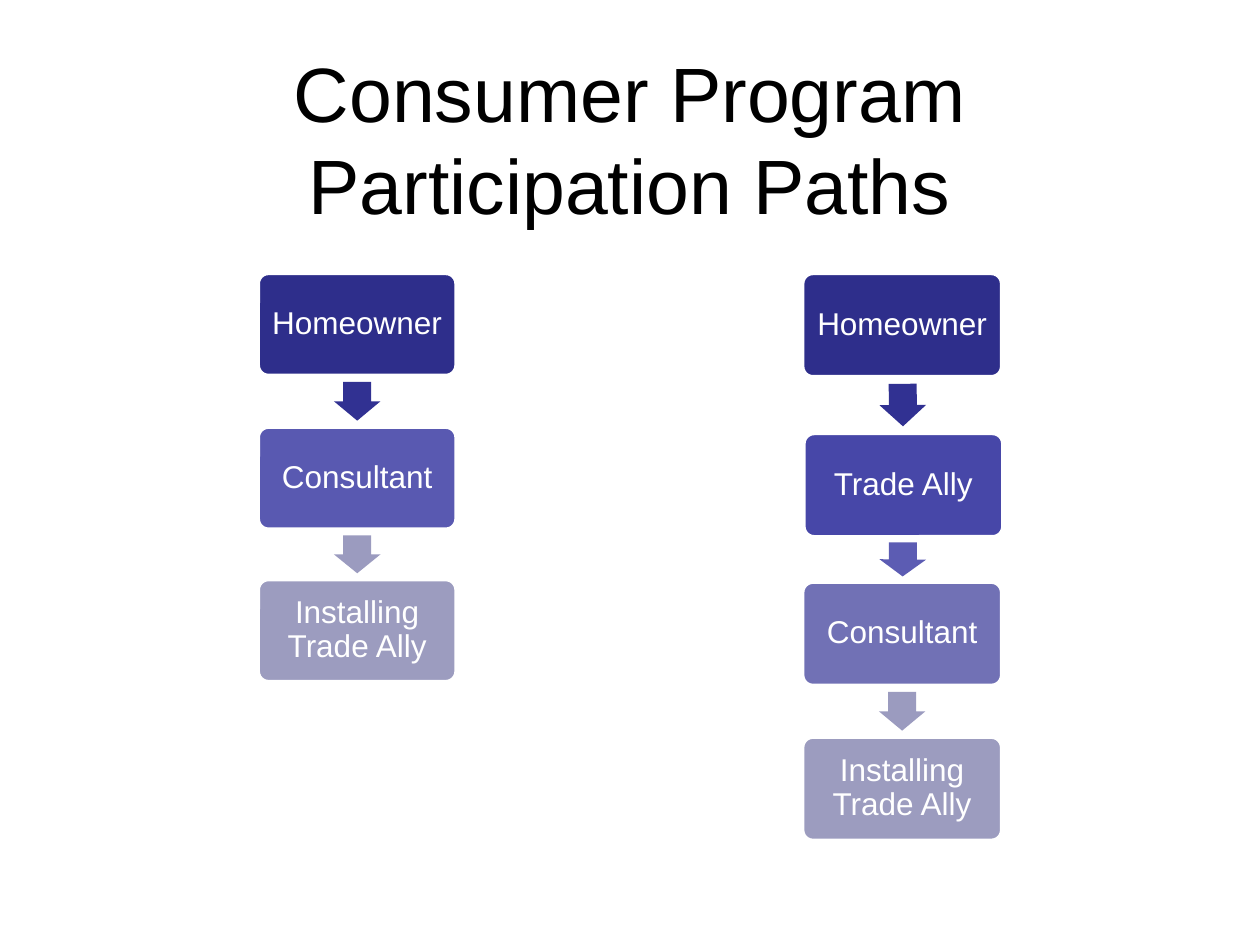
from math import atan2, degrees

from pptx import Presentation
from pptx.dml.color import RGBColor
from pptx.enum.shapes import MSO_SHAPE
from pptx.enum.text import MSO_ANCHOR, PP_ALIGN
from pptx.util import Inches, Pt

ROUNDED = MSO_SHAPE.ROUNDED_RECTANGLE
ARROW = MSO_SHAPE.RIGHT_ARROW
MIDDLE = MSO_ANCHOR.MIDDLE
CENTER = PP_ALIGN.CENTER

THEME = {
    "font": "Arial",
    "title_size": 44,
    "box_size": 18,
    "black": "000000",
    "white": "FFFFFF",
    "boxes": {"navy": "2E2E8B", "indigo": "4747A8", "violet": "5959B1",
              "lilac": "7171B5", "gray": "9C9CBF"},
    "arrows": {"navy": "313192", "violet": "5C5CB3", "gray": "9B9BBF"},
}

prs = Presentation()
prs.slide_width, prs.slide_height = Inches(10), Inches(7.5)
COL = prs.slide_width / 100
ROW = prs.slide_height / 75
s = prs.slides.add_slide(prs.slide_layouts[6])


def set_text(sp, text, size, color, inset=None, spacing=1.0):
    tf = sp.text_frame
    tf.word_wrap = True
    tf.vertical_anchor = MIDDLE
    if inset is not None:
        tf.margin_left = tf.margin_right = int(inset * COL)
        tf.margin_top = tf.margin_bottom = int(inset * ROW)
    p = tf.paragraphs[0]
    p.alignment = CENTER
    p.line_spacing = spacing
    r = p.add_run()
    r.text = text
    r.font.name = THEME["font"]
    r.font.size = Pt(size)
    r.font.color.rgb = RGBColor.from_string(color)


def add_filled(shapes, kind, left, top, width, height, color):
    sp = shapes.add_shape(kind, int(left * COL), int(top * ROW),
                          int(width * COL), int(height * ROW))
    sp.shadow.inherit = False
    sp.fill.solid()
    sp.fill.fore_color.rgb = RGBColor.from_string(color)
    sp.line.fill.background()
    return sp


title = s.shapes.add_textbox(int(7.5 * COL), int(4.7 * ROW), int(85 * COL), int(12.5 * ROW))
set_text(title, "Consumer Program Participation Paths", THEME["title_size"], THEME["black"])

paths = [
    (15.7, 8.1, [
        ("Homeowner", 20.5, 21.7, "navy", "navy"),
        ("Consultant", 20.5, 33.9, "violet", "gray"),
        ("Installing Trade Ally", 20.5, 46.0, "gray", None),
    ]),
    (15.8, 8.2, [
        ("Homeowner", 63.7, 21.7, "navy", "navy"),
        ("Trade Ally", 63.8, 34.4, "indigo", "violet"),
        ("Consultant", 63.7, 46.2, "lilac", "gray"),
        ("Installing Trade Ally", 63.7, 58.5, "gray", None),
    ]),
]
ARROW_WIDTH = 3.7
ARROW_SHARE = 0.75

for width, height, steps in paths:
    group = s.shapes.add_group_shape()
    for i, (label, left, top, color, arrow_color) in enumerate(steps):
        box = add_filled(group.shapes, ROUNDED, left, top, width, height, THEME["boxes"][color])
        box.adjustments[0] = 0.1
        box.line.color.rgb = RGBColor.from_string(THEME["white"])
        box.line.width = Pt(2)
        set_text(box, label, THEME["box_size"], THEME["white"], inset=0.7, spacing=0.9)
        if arrow_color:
            next_left, next_top = steps[i + 1][1:3]
            length = (next_top - top - height) * ARROW_SHARE
            mid_x = (left + next_left + width) / 2
            mid_y = (top + height + next_top) / 2
            arrow = add_filled(group.shapes, ARROW, mid_x - length / 2, mid_y - ARROW_WIDTH / 2,
                               length, ARROW_WIDTH, THEME["arrows"][arrow_color])
            arrow.adjustments[0] = 0.6
            arrow.adjustments[1] = 0.5
            arrow.rotation = degrees(atan2(next_top - top, next_left - left))

prs.save("out.pptx")
